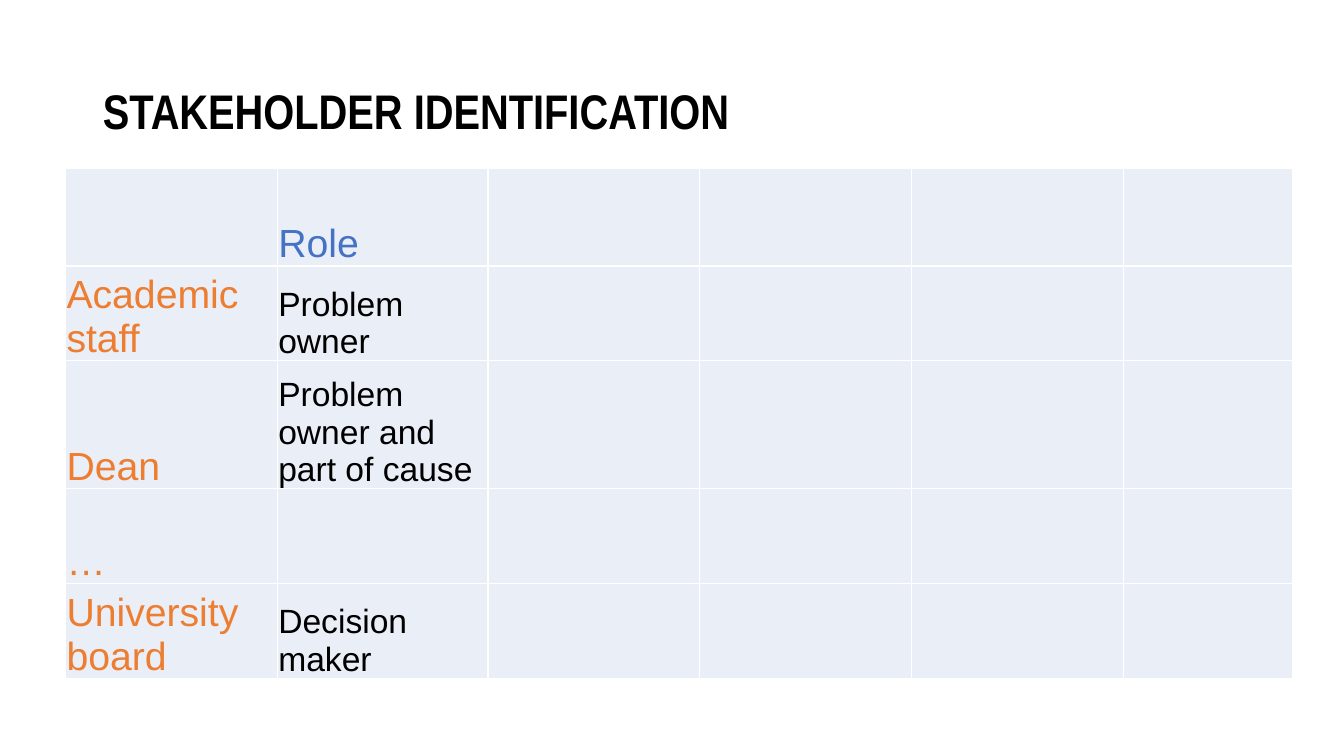
from pptx import Presentation
from pptx.dml.color import RGBColor
from pptx.enum.text import MSO_ANCHOR, MSO_AUTO_SIZE, PP_ALIGN
from pptx.oxml import parse_xml
from pptx.oxml.ns import nsdecls
from pptx.util import Inches, Pt

MIDDLE, BOTTOM = MSO_ANCHOR.MIDDLE, MSO_ANCHOR.BOTTOM
LEFT, NO_AUTOFIT = PP_ALIGN.LEFT, MSO_AUTO_SIZE.NONE
COLORS = {"title": "000000", "header": "4472C4", "stakeholder": "ED7D31",
          "role": "000000", "cell": "EAEFF7", "border": "FFFFFF"}
COLUMN_WIDTHS = [2.1, 2.09, 2.1, 2.1, 2.1, 1.68]
ROW_HEIGHTS = [0.97, 0.94, 1.27, 0.94, 0.94]
STAKEHOLDERS = [("", "Role"),
                ("Academic staff", "Problem owner"),
                ("Dean", "Problem owner and part of cause"),
                ("…", ""),
                ("University board", "Decision maker")]


def style_run(r, font, size, color, bold=False):
    """Set the font, size, colour and weight of a run."""
    r.font.name = font
    r.font.size = Pt(size)
    r.font.bold = bold
    r.font.color.rgb = RGBColor.from_string(COLORS[color])


def add_title(s, text, box):
    """Place the slide title in the given box."""
    sp = s.shapes.title
    sp.left, sp.top, sp.width, sp.height = map(Inches, box)
    tf = sp.text_frame
    tf.text = text
    tf.word_wrap = True
    tf.auto_size = NO_AUTOFIT
    tf.vertical_anchor = MIDDLE
    p = tf.paragraphs[0]
    p.alignment = LEFT
    p.line_spacing = 0.9
    style_run(p.runs[0], "Arial Narrow", 34.7, "title", True)


def format_cell(cell):
    """Give a cell its fill, narrow margins and thin borders."""
    cell.fill.solid()
    cell.fill.fore_color.rgb = RGBColor.from_string(COLORS["cell"])
    cell.margin_left = cell.margin_right = cell.margin_top = Inches(0.01)
    cell.margin_bottom = 0
    cell.vertical_anchor = BOTTOM
    tcPr = cell._tc.get_or_add_tcPr()
    for i, side in enumerate(("lnL", "lnR", "lnT", "lnB")):
        tcPr.insert(i, parse_xml(
            f'<a:{side} {nsdecls("a")} w="{Pt(1)}"><a:solidFill>'
            f'<a:srgbClr val="{COLORS["border"]}"/></a:solidFill></a:{side}>'))


def add_stakeholder_table(s, box):
    """Place the stakeholder table in the given box."""
    tbl = s.shapes.add_table(len(ROW_HEIGHTS), len(COLUMN_WIDTHS),
                             *map(Inches, box)).table
    tbl.first_row = tbl.horz_banding = False
    for column, width in zip(tbl.columns, COLUMN_WIDTHS):
        column.width = Inches(width)
    for row, height in zip(tbl.rows, ROW_HEIGHTS):
        row.height = Inches(height)
    for cell in tbl.iter_cells():
        format_cell(cell)
    for i, texts in enumerate(STAKEHOLDERS):
        for j, text in enumerate(texts):
            if not text:
                continue
            tf = tbl.cell(i, j).text_frame
            tf.text = text
            color = "header" if i == 0 else ("stakeholder", "role")[j]
            size = 24 if color == "role" else 28
            style_run(tf.paragraphs[0].runs[0], "Arial", size, color)


def main():
    """Build the stakeholder slide and save it."""
    prs = Presentation()
    prs.slide_width, prs.slide_height = Inches(13.33), Inches(7.5)
    s = prs.slides.add_slide(prs.slide_layouts[5])
    add_title(s, "STAKEHOLDER IDENTIFICATION", (0.92, 0.4, 11.5, 1.45))
    add_stakeholder_table(
        s, (0.65, 1.67, sum(COLUMN_WIDTHS), sum(ROW_HEIGHTS)))
    prs.save("out.pptx")


if __name__ == "__main__":
    main()
